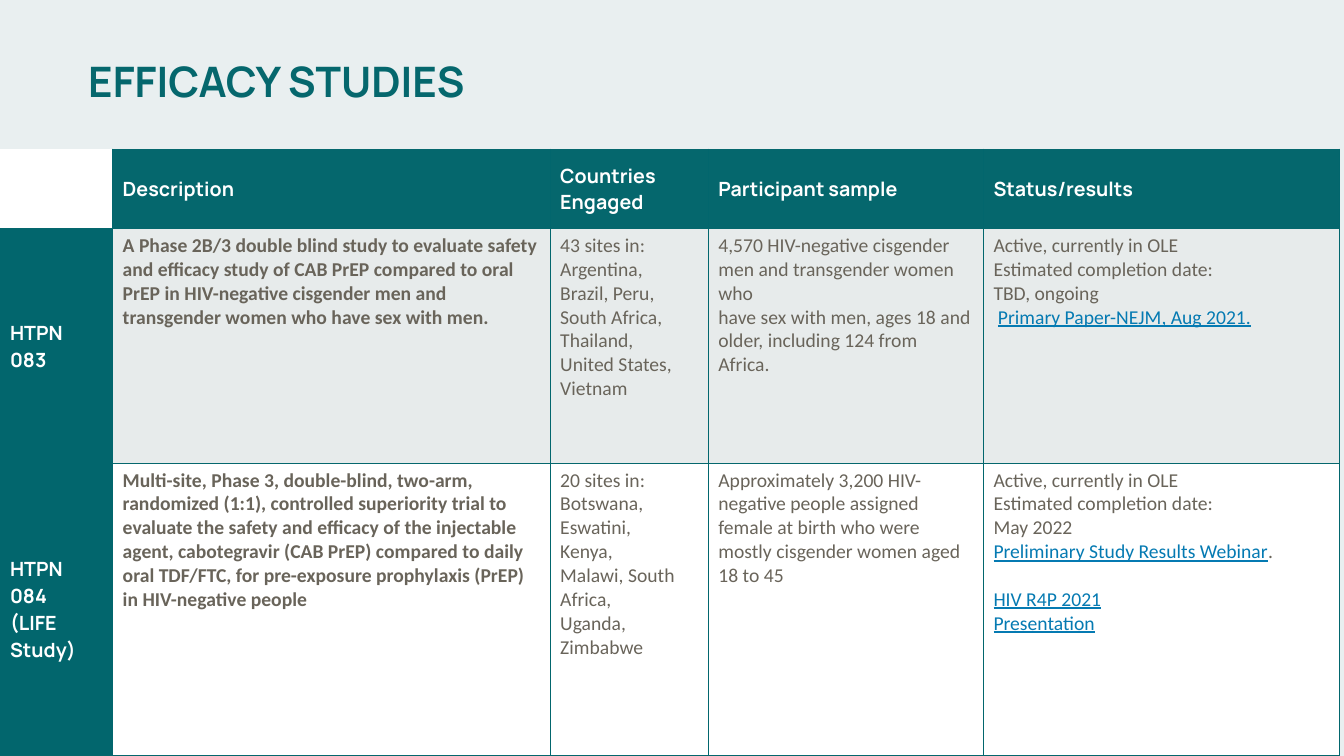
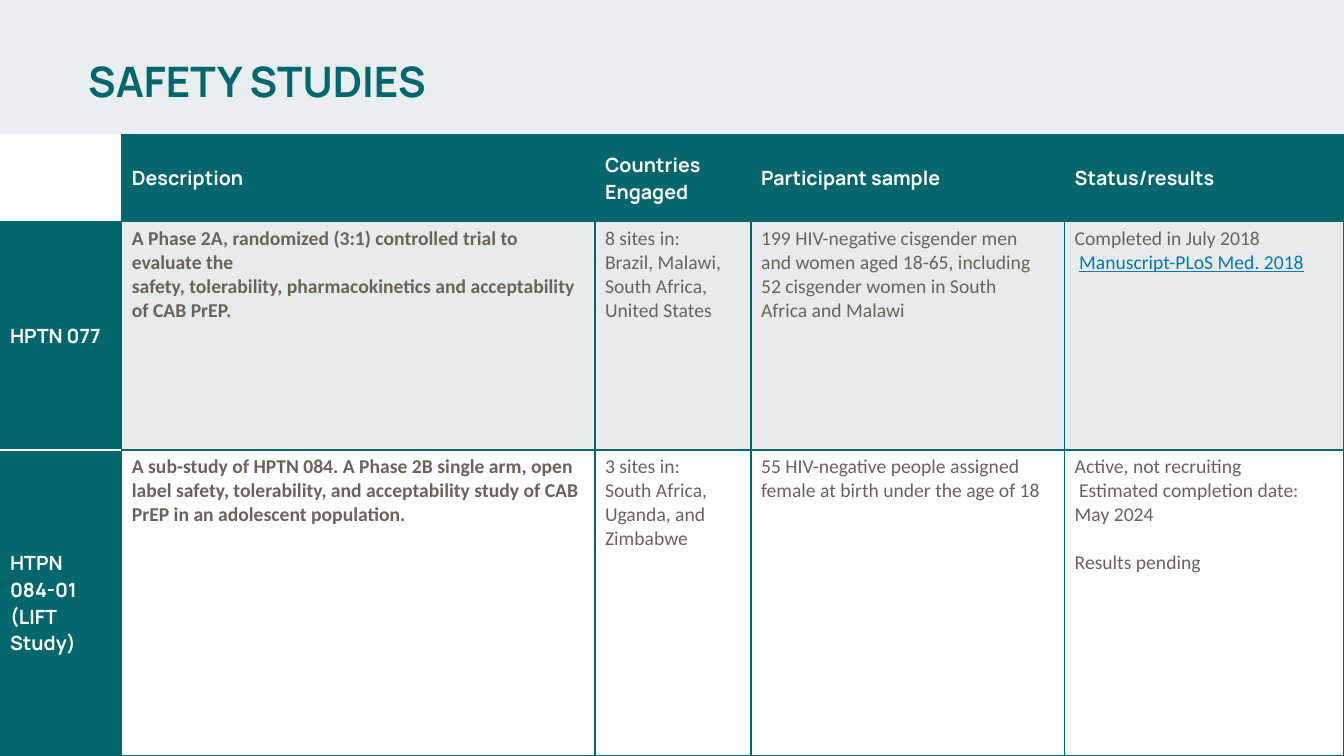
from dataclasses import dataclass
from lxml.etree import SubElement
from pptx import Presentation
from pptx.dml.color import RGBColor
from pptx.enum.text import MSO_ANCHOR, PP_ALIGN
from pptx.oxml.ns import qn
from pptx.util import Pt


@dataclass(frozen=True)
class Theme:
    page: str = "E9EFF0"
    teal: str = "05676D"
    label: str = "02666D"
    band: str = "E7EBEB"
    white: str = "FFFFFF"
    body: str = "69645A"
    link: str = "057AB2"
    head_font: str = "Manrope"
    body_font: str = "Calibri"
    title_size: int = 30
    cell_size: int = 14
    line_gap: int = 17


@dataclass(frozen=True)
class Para:
    lead: str = ""
    link: str = ""
    tail: str = ""
    gap: int = 0


T = Theme()
HEADERS = ["", "Description", "Countries Engaged", "Participant sample", "Status/results"]

SLIDES = [
    dict(
        title="EFFICACY STUDIES",
        top=106.5,
        cols=[80.5, 312.5, 113, 196.5, 254.5],
        heights=[57, 167.5, 209],
        divider=T.label,
        rows=[
            [
                ["HTPN 083"],
                ["A Phase 2B/3 double blind study to evaluate safety and efficacy study of "
                 "CAB PrEP compared to oral PrEP in HIV-negative cisgender men and "
                 "transgender women who have sex with men."],
                ["43 sites in:", "Argentina,", "Brazil, Peru,", "South Africa,",
                 "Thailand,", "United States,", "Vietnam"],
                ["4,570 HIV-negative cisgender men and transgender women who",
                 "have sex with men, ages 18 and older, including 124 from Africa."],
                ["Active, currently in OLE", "Estimated completion date:", "TBD, ongoing",
                 Para(" ", "Primary Paper-NEJM, Aug 2021.")],
            ],
            [
                ["HTPN 084", "(LIFE Study)"],
                ["Multi-site, Phase 3, double-blind, two-arm, randomized (1:1), controlled "
                 "superiority trial to evaluate the safety and efficacy of the injectable "
                 "agent, cabotegravir (CAB PrEP) compared to daily oral TDF/FTC, for "
                 "pre-exposure prophylaxis (PrEP) in HIV-negative people"],
                ["20 sites in:", "Botswana,", "Eswatini,", "Kenya,", "Malawi, South",
                 "Africa,", "Uganda,", "Zimbabwe"],
                ["Approximately 3,200 HIV-negative people assigned female at birth who "
                 "were mostly cisgender women aged 18 to 45"],
                ["Active, currently in OLE", "Estimated completion date:", "May 2022",
                 Para(link="Preliminary Study Results Webinar", tail="."),
                 Para(link="HIV R4P 2021", gap=T.line_gap),
                 Para(link="Presentation")],
            ],
        ],
    ),
    dict(
        title="SAFETY STUDIES",
        top=96,
        cols=[87, 338, 111.5, 224, 199.5],
        heights=[62.5, 163, 218.5],
        divider=T.white,
        rows=[
            [
                ["HPTN 077"],
                ["A Phase 2A, randomized (3:1) controlled trial to evaluate the",
                 "safety, tolerability, pharmacokinetics and acceptability of CAB PrEP."],
                ["8 sites in:", "Brazil, Malawi,", "South Africa,", "United States"],
                ["199 HIV-negative cisgender men",
                 "and women aged 18-65, including 52 cisgender women in South",
                 "Africa and Malawi"],
                ["Completed in July 2018", Para(" ", "Manuscript-PLoS Med. 2018")],
            ],
            [
                ["HTPN 084-01", "(LIFT Study)"],
                ["A sub-study of HPTN 084. A Phase 2B single arm, open label safety, "
                 "tolerability, and acceptability study of CAB PrEP in an adolescent "
                 "population."],
                ["3 sites in:", "South Africa,", "Uganda, and", "Zimbabwe"],
                ["55 HIV-negative people assigned female at birth under the age of 18"],
                ["Active, not recruiting", " Estimated completion date:", "May 2024",
                 Para("Results pending", gap=T.line_gap)],
            ],
        ],
    ),
]


def add_run(p, text, font, size, color, bold=False, underline=False):
    r = p.add_run()
    r.text = text
    r.font.name = font
    r.font.size = Pt(size)
    r.font.bold = bold
    r.font.underline = underline
    r.font.color.rgb = RGBColor.from_string(color)


def set_borders(cell, colors):
    tcPr = cell._tc.get_or_add_tcPr()
    for side, color in zip("LRTB", colors):
        ln = SubElement(tcPr, qn(f"a:ln{side}"), w=str(Pt(1)))
        fill = SubElement(ln, qn("a:solidFill"))
        SubElement(fill, qn("a:srgbClr"), val=color)


prs = Presentation()
prs.slide_width, prs.slide_height = Pt(960), Pt(540)
bg = prs.slide_master.background.fill
bg.solid()
bg.fore_color.rgb = RGBColor.from_string(T.page)

for data in SLIDES:
    s = prs.slides.add_slide(prs.slide_layouts[5])
    title = s.shapes.title
    title.left, title.top, title.width, title.height = Pt(0), Pt(15), Pt(828), Pt(90)
    tf = title.text_frame
    tf.margin_left = Pt(63)
    tf.vertical_anchor = MSO_ANCHOR.MIDDLE
    p = tf.paragraphs[0]
    p.alignment = PP_ALIGN.LEFT
    p.line_spacing = 0.9
    add_run(p, data["title"], T.head_font, T.title_size, T.teal, bold=True)

    cols, heights = data["cols"], data["heights"]
    table = s.shapes.add_table(len(heights), len(cols), Pt(0), Pt(data["top"]),
                               Pt(sum(cols)), Pt(sum(heights))).table
    for column, width in zip(table.columns, cols):
        column.width = Pt(width)
    for row, height in zip(table.rows, heights):
        row.height = Pt(height)

    content = [[[text] for text in HEADERS]] + data["rows"]
    for i, row in enumerate(content):
        for j, paras in enumerate(row):
            cell = table.cell(i, j)
            corner = i == j == 0
            heading = i == 0 or j == 0
            sides = [T.label, T.label, T.teal, T.teal]
            if corner:
                sides = [T.white, T.teal, T.white, T.teal]
            elif j == 0:
                sides[2 if i == 2 else 3] = data["divider"]
            set_borders(cell, sides)

            if corner:
                color = T.white
            elif heading:
                color = T.teal if i == 0 else T.label
            else:
                color = T.band if i == 1 else T.white
            cell.fill.solid()
            cell.fill.fore_color.rgb = RGBColor.from_string(color)
            if corner:
                continue

            cell.vertical_anchor = MSO_ANCHOR.MIDDLE if heading else MSO_ANCHOR.TOP
            font = T.head_font if heading else T.body_font
            ink = T.white if heading else T.body
            tf = cell.text_frame
            for k, item in enumerate(paras):
                para = item if isinstance(item, Para) else Para(item)
                p = tf.paragraphs[0] if k == 0 else tf.add_paragraph()
                if para.gap:
                    p.space_before = Pt(para.gap)
                for text in (para.lead, para.link, para.tail):
                    if text:
                        linked = text == para.link
                        add_run(p, text, font, T.cell_size, T.link if linked else ink,
                                bold=heading or j == 1, underline=linked)

prs.save("out.pptx")
